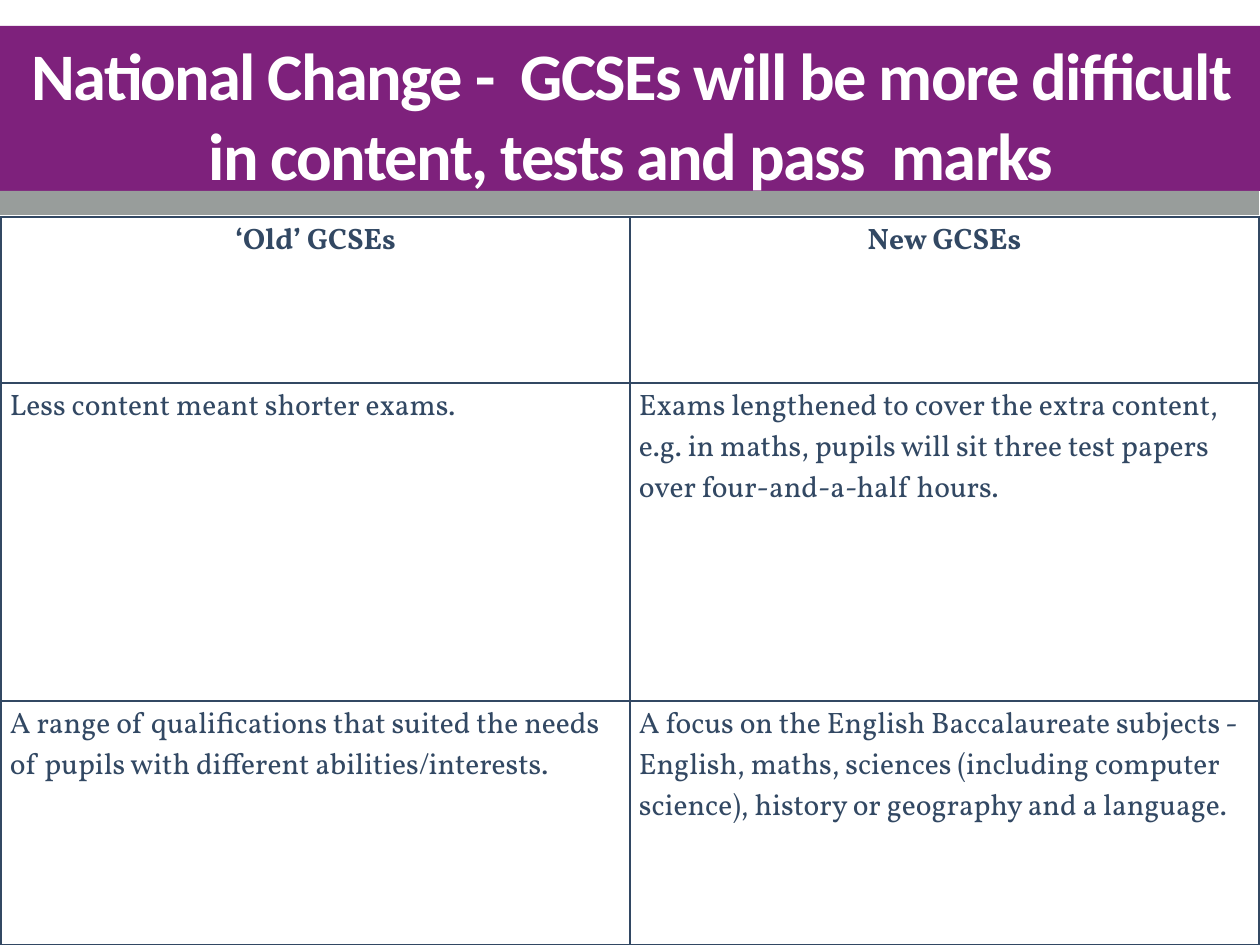
from lxml import etree
from pptx import Presentation
from pptx import util as u
from pptx.dml.color import RGBColor
from pptx.enum import shapes, text
from pptx.oxml.ns import qn

TITLE = "National Change -  GCSEs will be more difficult in content, tests and pass  marks"
ROWS = [
    ("‘Old’ GCSEs", "New GCSEs"),
    ("Less content meant shorter exams.",
     "Exams lengthened to cover the extra content, e.g. in maths, pupils will sit "
     "three test papers over four-and-a-half hours."),
    ("A range of qualifications that suited the needs of pupils with different "
     "abilities/interests.",
     "A focus on the English Baccalaureate subjects - English, maths, sciences "
     "(including computer science), history or geography and a language."),
]

PURPLE = RGBColor(0x7E, 0x21, 0x7C)
GREY = RGBColor(0x98, 0x9D, 0x9B)
NAVY = RGBColor(0x32, 0x48, 0x63)
WHITE = RGBColor(0xFF, 0xFF, 0xFF)

PX = 10320  # EMU per px
SLIDE = (1260, 945)
BAND = (-26, 26, 1288, 165)
TITLE_BOX = (2, 34, 1258, 160)
STRIP = (-1, 191, 1260, 24)
TABLE_LEFT, TABLE_TOP, COL_W = 1, 217, 629
ROW_HEIGHTS = (166, 318, 244)


def emu(*lengths):
    return [u.Emu(n * PX) for n in lengths]


def style_paragraph(p, font, size, color, bold, align):
    p.alignment = align
    p.font.name, p.font.size, p.font.bold = font, u.Pt(size), bold
    p.font.color.rgb = color


def add_bar(s, box, color):
    sp = s.shapes.add_shape(shapes.MSO_SHAPE.RECTANGLE, *emu(*box))
    sp.shadow.inherit = False
    sp.fill.solid()
    sp.fill.fore_color.rgb = color
    sp.line.fill.background()
    return sp


def add_title(s):
    sp = s.shapes.title
    sp.left, sp.top, sp.width, sp.height = emu(*TITLE_BOX)
    tf = sp.text_frame
    tf.word_wrap = True
    tf.auto_size = text.MSO_AUTO_SIZE.NONE
    tf.vertical_anchor = text.MSO_ANCHOR.BOTTOM
    tf.margin_left = tf.margin_top = tf.margin_right = tf.margin_bottom = 0
    p = tf.paragraphs[0]
    r = p.add_run()
    r.text = TITLE
    r.font._element.set("spc", "-130")
    style_paragraph(p, "Calibri", 54, WHITE, True, text.PP_ALIGN.CENTER)
    return sp


def set_borders(cell, color, width):
    tcPr = cell._tc.get_or_add_tcPr()
    for i, side in enumerate(("lnL", "lnR", "lnT", "lnB")):
        ln = etree.Element(qn(f"a:{side}"), w=str(u.Pt(width)))
        fill = etree.SubElement(ln, qn("a:solidFill"))
        etree.SubElement(fill, qn("a:srgbClr"), val=str(color))
        tcPr.insert(i, ln)


def add_comparison(s):
    n_rows, n_cols = len(ROWS), len(ROWS[0])
    box = emu(TABLE_LEFT, TABLE_TOP, COL_W * n_cols, sum(ROW_HEIGHTS))
    table = s.shapes.add_table(n_rows, n_cols, *box).table
    table.first_row = table.horz_banding = False
    for col in table.columns:
        col.width = u.Emu(COL_W * PX)
    for i, (texts, height) in enumerate(zip(ROWS, ROW_HEIGHTS)):
        header = i == 0
        align = text.PP_ALIGN.CENTER if header else text.PP_ALIGN.LEFT
        table.rows[i].height = u.Emu(height * PX)
        for j, words in enumerate(texts):
            cell = table.cell(i, j)
            cell.fill.background()
            set_borders(cell, NAVY, 1)
            cell.text = words
            style_paragraph(cell.text_frame.paragraphs[0], "Vollkorn", 24, NAVY,
                            header, align)


def main():
    prs = Presentation()
    prs.slide_width, prs.slide_height = emu(*SLIDE)
    s = prs.slides.add_slide(prs.slide_layouts[5])
    title = add_title(s)
    band = add_bar(s, BAND, PURPLE)
    title.element.addprevious(band.element)  # the band lies behind the title
    add_bar(s, STRIP, GREY)
    add_comparison(s)
    prs.save("out.pptx")


if __name__ == "__main__":
    main()
